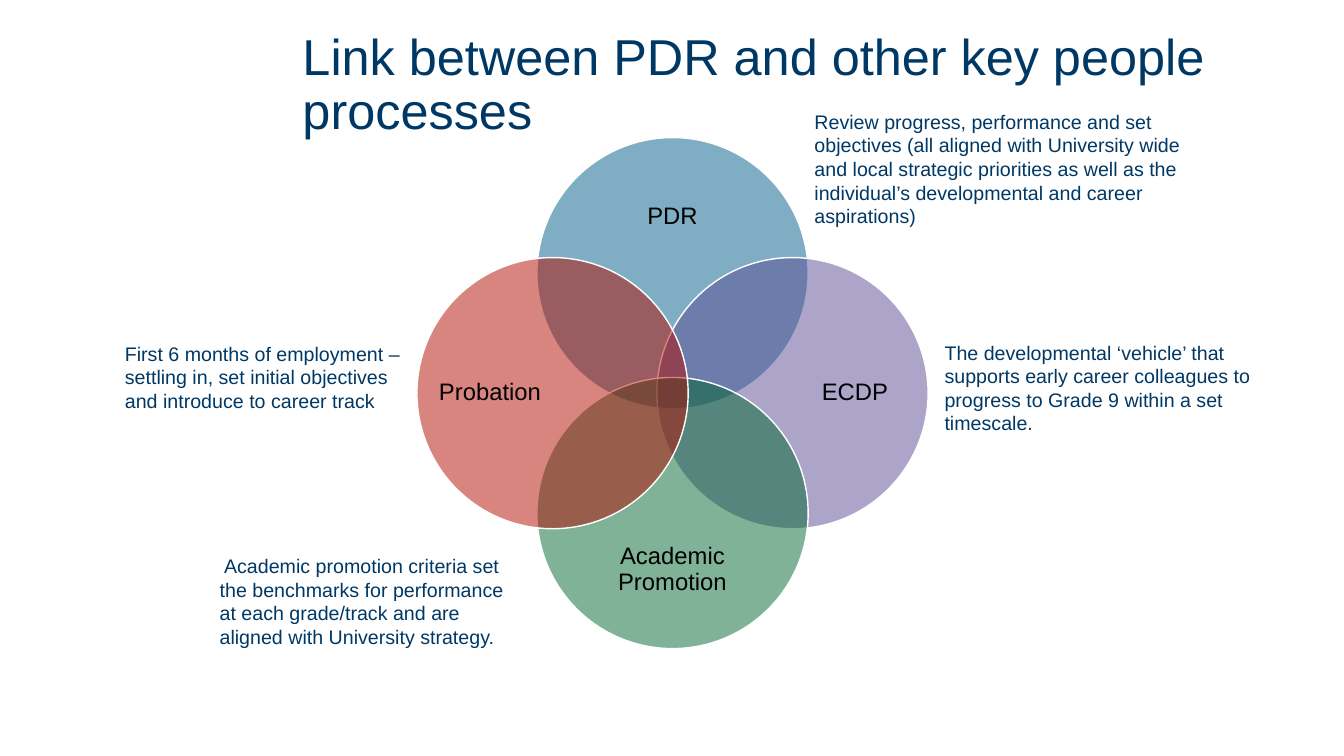
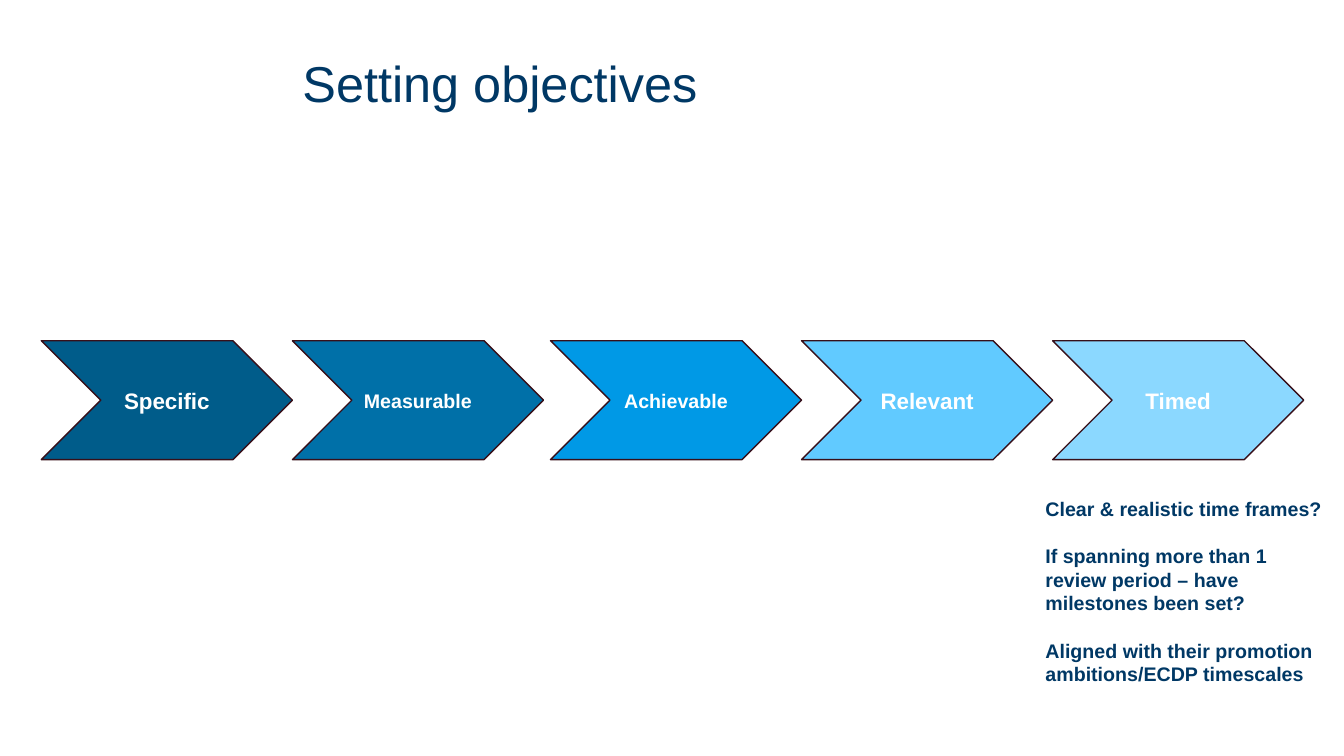
import pptx
import pptx.util
import pptx.dml.color
import pptx.enum.shapes
import pptx.enum.text
import lxml.etree

Inches = pptx.util.Inches
Pt = pptx.util.Pt
Shape = pptx.enum.shapes.MSO_SHAPE
Align = pptx.enum.text.PP_ALIGN
Anchor = pptx.enum.text.MSO_ANCHOR
Fit = pptx.enum.text.MSO_AUTO_SIZE
rgb = pptx.dml.color.RGBColor.from_string


class Theme:
    font = "Arial"
    navy = "003865"
    black = "000000"
    white = "FFFFFF"
    edge = "370F19"
    teal = "005C8A"
    plum = "5B4D94"
    green = "006630"
    red = "B30C00"
    steps = [teal, "0070A8", "0099E6", "61CAFF", "8BD8FF"]
    title = 36
    label = 17
    large = 16
    body = 14


def write(box, text, size, color, bold=False, align=Align.LEFT, lead=1.0, gap=0):
    frame = box.text_frame
    frame.word_wrap = True
    frame.text = text
    for i, par in enumerate(frame.paragraphs):
        par.alignment = align
        par.line_spacing = lead
        if i:
            par.space_before = Pt(gap)
        for run in par.runs:
            run.font.name = Theme.font
            run.font.size = Pt(size)
            run.font.bold = bold
            run.font.color.rgb = rgb(color)
    return frame


def draw(slide, kind, area, fill, line):
    shape = slide.shapes.add_shape(kind, *map(Inches, area))
    shape.shadow.inherit = False
    shape.fill.solid()
    shape.fill.fore_color.rgb = rgb(fill)
    shape.line.color.rgb = rgb(line)
    shape.line.width = Pt(1)
    return shape


deck = pptx.Presentation()
deck.slide_width = Inches(13.33)
deck.slide_height = Inches(7.5)

slides = []
for text in ["Link between PDR and other key people processes", "Setting objectives"]:
    slide = deck.slides.add_slide(deck.slide_layouts[5])
    title = slide.shapes.title
    title.left, title.top = Inches(2.9), Inches(0.13)
    title.width, title.height = Inches(9.52), Inches(1.45)
    frame = write(title, text, Theme.title, Theme.navy, lead=0.9)
    frame.vertical_anchor = Anchor.MIDDLE
    frame.auto_size = Fit.NONE
    slides.append(slide)
links, goals = slides

mid_x, mid_y = 6.67, 3.9
size, shift = 2.69, 1.19
circles = [
    ("PDR", 0, -1, Theme.teal),
    ("ECDP", 1, 0, Theme.plum),
    ("Academic Promotion", 0, 1, Theme.green),
    ("Probation", -1, 0, Theme.red),
]
for text, dx, dy, color in circles:
    left = mid_x + dx * shift - size / 2
    top = mid_y + dy * shift - size / 2
    disc = draw(links, Shape.OVAL, (left, top, size, size), color, Theme.white)
    tint = disc.fill._xPr.find(".//" + pptx.oxml.ns.qn("a:srgbClr"))
    lxml.etree.SubElement(tint, pptx.oxml.ns.qn("a:alpha"), val="50000")

    wide, high = (1.04, 2.07) if dx else (2.07, 0.85)
    left = mid_x + dx * 1.81 - wide / 2
    top = mid_y + dy * 1.75 - high / 2
    box = links.shapes.add_textbox(*map(Inches, (left, top, wide, high)))
    frame = write(box, text, Theme.label, Theme.black, align=Align.CENTER, lead=0.9)
    frame.vertical_anchor = Anchor.MIDDLE
    frame.margin_left = frame.margin_right = 0
    frame.margin_top = frame.margin_bottom = 0

notes = [
    ((7.98, 1.04, 4.14, 1.28),
     "Review progress, performance and set objectives (all aligned with "
     "University wide and local strategic priorities as well as the "
     "individual’s developmental and career aspirations)"),
    ((2.08, 5.45, 3.21, 1.04),
     " Academic promotion criteria set the benchmarks for performance at each "
     "grade/track and are aligned with University strategy."),
    ((9.27, 3.33, 3.63, 1.04),
     "The developmental ‘vehicle’ that supports early career colleagues to "
     "progress to Grade 9 within a set timescale."),
    ((1.14, 3.34, 2.95, 0.81),
     "First 6 months of employment – settling in, set initial objectives and "
     "introduce to career track"),
]
for area, text in notes:
    box = links.shapes.add_textbox(*map(Inches, area))
    write(box, text, Theme.body, Theme.navy)

steps = [
    ("Specific", 0.41, Theme.large),
    ("Measurable", 2.9, Theme.body),
    ("Achievable", 5.46, Theme.body),
    ("Relevant", 7.95, Theme.large),
    ("Timed", 10.44, Theme.large),
]
for (text, left, size), color in zip(steps, Theme.steps):
    arrow = draw(goals, Shape.CHEVRON, (left, 3.38, 2.49, 1.18), color, Theme.edge)
    frame = write(arrow, text, size, Theme.white, True, Align.CENTER)
    frame.vertical_anchor = Anchor.MIDDLE

checks = [
    "Clear & realistic time frames?",
    "If spanning more than 1 review period – have milestones been set?",
    "Aligned with their promotion ambitions/ECDP timescales",
]
box = goals.shapes.add_textbox(*map(Inches, (10.27, 4.88, 2.95, 2.22)))
write(box, "\n".join(checks), Theme.body, Theme.navy, True, gap=17)

deck.save("out.pptx")
